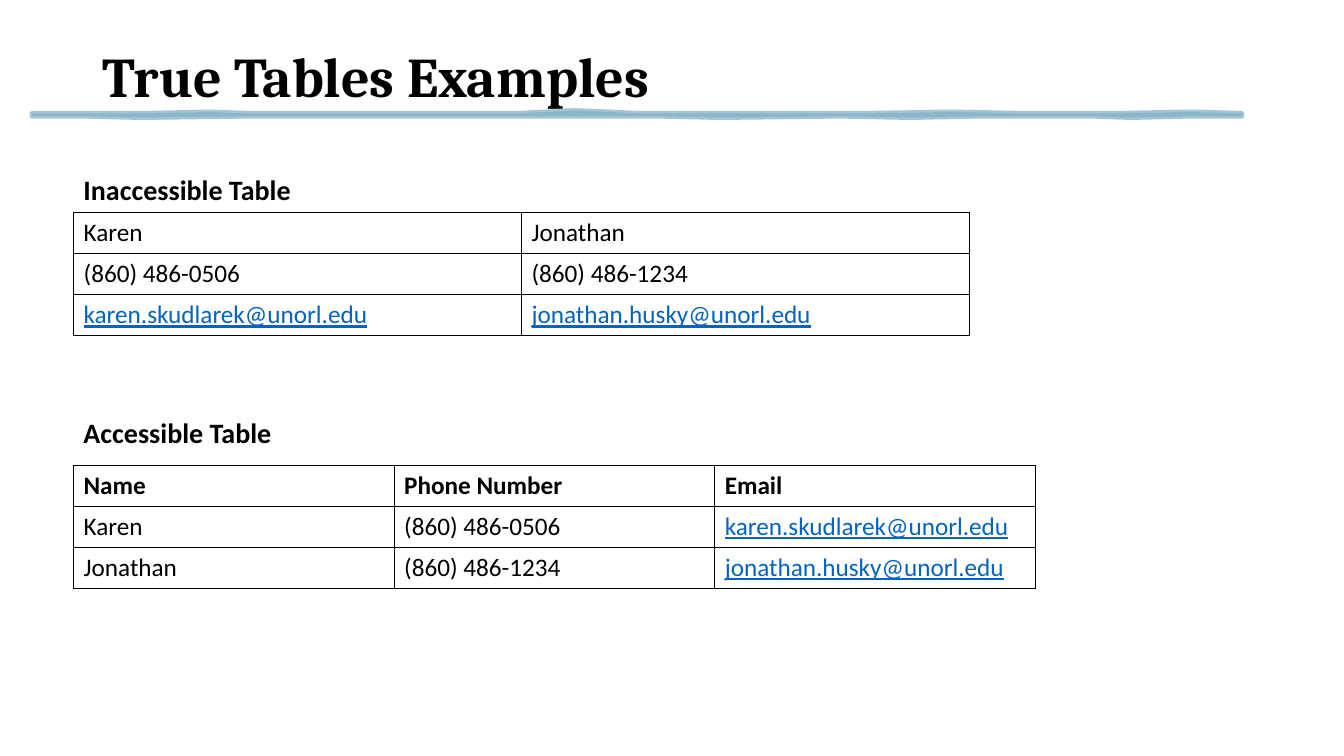
import pptx
import pptx.dml.color
import pptx.enum.text
import pptx.oxml
import pptx.oxml.ns
import pptx.util

Pt = pptx.util.Pt
BLACK, LINK, BRUSH = "000000", "0563C1", "83B2C9"
LEFT = 52.56
ROW_HEIGHT = 29.2


def color(hex_string):
    return pptx.dml.color.RGBColor.from_string(hex_string)


def write(frame, text, font_name, size, bold=False, ink=BLACK):
    para = frame.paragraphs[0]
    para.text = text
    para.alignment = pptx.enum.text.PP_ALIGN.LEFT
    para.font.name = font_name
    para.font.size = Pt(size)
    para.font.bold = bold
    para.font.color.rgb = color(ink)
    return para


deck = pptx.Presentation()
deck.slide_width, deck.slide_height = Pt(960), Pt(540)
page = deck.slides.add_slide(deck.slide_layouts[5])

# Title
title = page.shapes.title
title.left, title.top, title.width, title.height = Pt(66.24), Pt(4.32), Pt(833.76), Pt(104.4)
title.text_frame.vertical_anchor = pptx.enum.text.MSO_ANCHOR.MIDDLE
write(title.text_frame, "True Tables Examples", "Cambria", 40, bold=True).line_spacing = 0.9

# Brush stroke under the title: upper edge left to right, lower edge back
upper_edge = [(23, 81.2), (60, 81), (105, 81.2), (150, 79.8), (176, 81), (240, 81.2), (310, 81),
              (370, 80.6), (410, 79.4), (435, 79.8), (455, 81.2), (540, 81), (620, 81.4),
              (680, 79.8), (730, 81), (800, 81), (850, 80.4), (887, 81.2)]
lower_edge = [(887, 82.8), (850, 82.8), (808, 84.2), (780, 82.8), (700, 82.8), (650, 83.6),
              (600, 82.8), (515, 83.8), (470, 82.6), (380, 82.8), (330, 83.4), (250, 82.8),
              (180, 82.8), (100, 83.8), (60, 82.6), (23, 82.8)]
builder = page.shapes.build_freeform(*upper_edge[0], scale=Pt(1))
builder.add_line_segments(upper_edge[1:] + lower_edge, close=True)
stroke = builder.convert_to_shape()
stroke.shadow.inherit = False
stroke.fill.solid()
stroke.fill.fore_color.rgb = color(BRUSH)
stroke.line.color.rgb = color(BRUSH)
stroke.line.width = Pt(3.5)
for tint in stroke._element.spPr.iter(pptx.oxml.ns.qn("a:srgbClr")):
    tint.append(pptx.oxml.parse_xml(f'<a:alpha {pptx.oxml.ns.nsdecls("a")} val="75000"/>'))

# Captions and tables: caption, caption top, table top, column width, header row, rows
karen = ["Karen", "(860) 486-0506", "karen.skudlarek@unorl.edu"]
jonathan = ["Jonathan", "(860) 486-1234", "jonathan.husky@unorl.edu"]
sections = [
    ("Inaccessible Table", 119.5, 152, 320, False, list(zip(karen, jonathan))),
    ("Accessible Table", 293, 332.5, 229, True, [["Name", "Phone Number", "Email"], karen, jonathan]),
]
for caption, caption_top, table_top, column_width, has_header, rows in sections:
    box = page.shapes.add_textbox(Pt(LEFT), Pt(caption_top), Pt(238.3), Pt(31.5))
    box.text_frame.word_wrap = True
    box.text_frame.auto_size = pptx.enum.text.MSO_AUTO_SIZE.SHAPE_TO_FIT_TEXT
    write(box.text_frame, caption, "Calibri", 20, bold=True)

    column_count = len(rows[0])
    table = page.shapes.add_table(len(rows), column_count, Pt(LEFT), Pt(table_top),
                                  Pt(column_width * column_count), Pt(ROW_HEIGHT * len(rows))).table
    table.first_row = has_header
    table.horz_banding = False
    for column in table.columns:
        column.width = Pt(column_width)
    for row_index, row in enumerate(rows):
        table.rows[row_index].height = Pt(ROW_HEIGHT)
        for column_index, text in enumerate(row):
            cell = table.cell(row_index, column_index)
            is_email = "@" in text
            para = write(cell.text_frame, text, "Calibri", 18,
                         bold=has_header and row_index == 0, ink=LINK if is_email else BLACK)
            para.font.underline = is_email
            properties = cell._tc.get_or_add_tcPr()
            for side in ("lnL", "lnR", "lnT", "lnB"):
                properties.append(pptx.oxml.parse_xml(
                    f'<a:{side} {pptx.oxml.ns.nsdecls("a")} w="12700"><a:solidFill>'
                    f'<a:srgbClr val="{BLACK}"/></a:solidFill></a:{side}>'))
            cell.fill.background()

deck.save("out.pptx")
